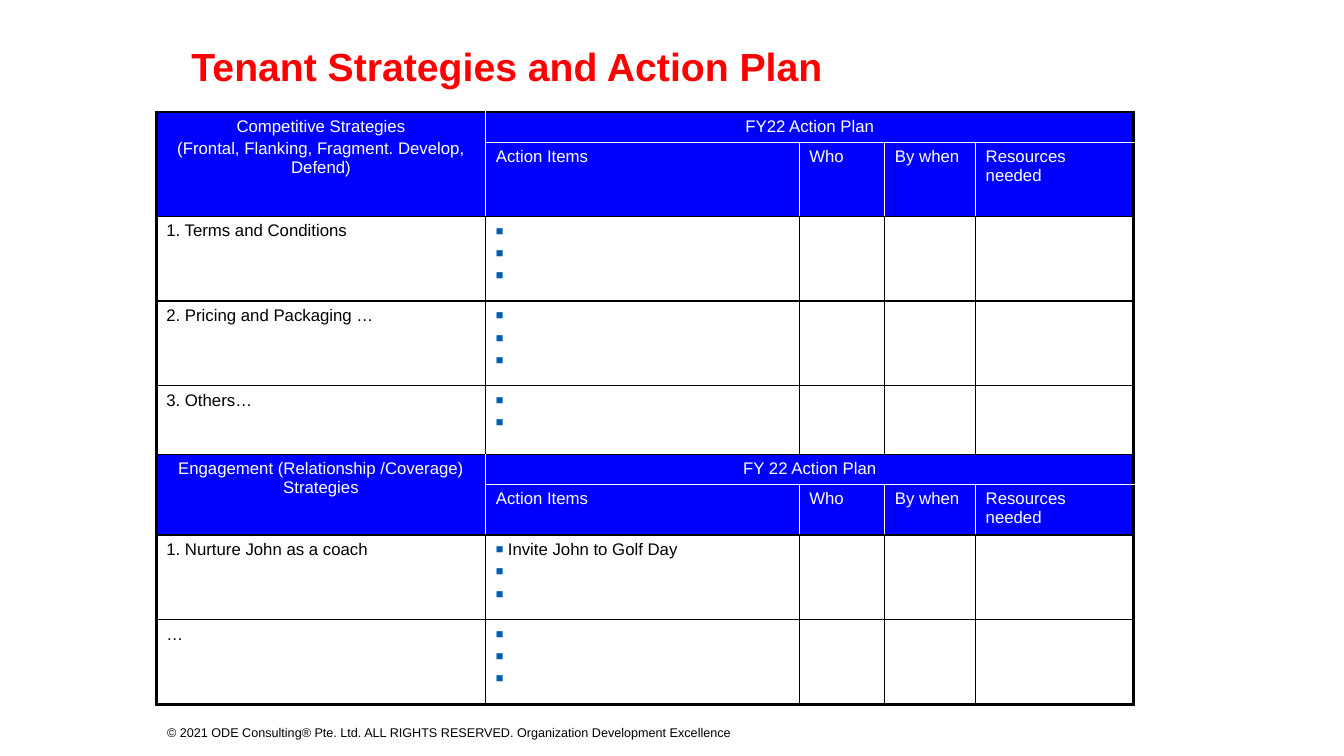
from lxml import etree
from pptx import Presentation
from pptx.dml.color import RGBColor
from pptx.enum.text import MSO_ANCHOR, PP_ALIGN
from pptx.oxml.ns import qn
from pptx.util import Pt

LEFT, MID = PP_ALIGN.LEFT, PP_ALIGN.CENTER
CENTER = MSO_ANCHOR.MIDDLE

BLACK, WHITE, BLUE, RED, DOT = "000000", "FFFFFF", "0000FF", "FF0000", "005EAF"
FONT = "Arial"
THIN, THICK = 1, 2.25
PLAIN = "{2D5ABB26-0587-4C30-8999-92F81FD0307C}"

TITLE = "Tenant Strategies and Action Plan"
FOOT = ("© 2021 ODE Consulting® Pte. Ltd. ALL RIGHTS RESERVED. "
        "Organization Development Excellence")
HEADS = ["Action Items", "Who", "By when", "Resources needed"]
PARTS = [
    {
        "name": ["Competitive Strategies",
                 "(Frontal, Flanking, Fragment. Develop, Defend)"],
        "plan": "FY22 Action Plan",
        "highs": [21.6, 52.9],
        "rows": [
            ("1. Terms and Conditions", [" ", " ", " "], 60.5),
            ("2. Pricing and Packaging …", [" ", " ", " "], 60.5),
            ("3. Others…", [" ", " "], 49),
        ],
    },
    {
        "name": ["Engagement (Relationship /Coverage) Strategies"],
        "plan": "FY 22 Action Plan",
        "highs": [21.6, 36],
        "rows": [
            ("1. Nurture John as a coach",
             ["Invite John to Golf Day", " ", " "], 60.5),
            ("…", [" ", " ", " "], 60.5),
        ],
    },
]
WIDTHS = [235.4, 223.9, 61.2, 64.8, 113]
LAST = len(WIDTHS) - 1


def paint(code):
    return RGBColor.from_string(code)


def bullet(para):
    props = para._p.get_or_add_pPr()
    props.set("marL", str(Pt(8.6)))
    props.set("indent", str(-Pt(8.6)))
    tone = etree.SubElement(props, qn("a:buClr"))
    etree.SubElement(tone, qn("a:srgbClr"), val=DOT)
    etree.SubElement(props, qn("a:buSzPct"), val="75000")
    etree.SubElement(props, qn("a:buFont"), typeface=FONT)
    etree.SubElement(props, qn("a:buChar"), char="■")


def write(frame, lines, size=12, color=BLACK, bold=False, align=LEFT,
          dots=False, space=None):
    frame.word_wrap = True
    for num, line in enumerate(lines):
        para = frame.add_paragraph() if num else frame.paragraphs[0]
        para.alignment = align
        if num:
            para.space_before = Pt(2.4)
        if space:
            para.line_spacing = space
        if dots:
            bullet(para)
        if not line:
            etree.SubElement(para._p, qn("a:endParaRPr"), sz=str(size * 100))
            continue
        run = para.add_run()
        run.text = line
        font = run.font
        font.name, font.size, font.bold = FONT, Pt(size), bold
        font.color.rgb = paint(color)


def label(page, box, text, inset=None, **look):
    frame = page.shapes.add_textbox(*map(Pt, box)).text_frame
    frame.vertical_anchor = CENTER
    if inset is not None:
        frame.margin_left = frame.margin_right = Pt(inset)
        frame.margin_top = frame.margin_bottom = Pt(inset)
    write(frame, [text], **look)


def border(cell, sides):
    props = cell._tc.get_or_add_tcPr()
    for spot, (side, (color, width)) in enumerate(sides.items()):
        line = etree.Element(qn("a:ln" + side), w=str(Pt(width)))
        fill = etree.SubElement(line, qn("a:solidFill"))
        etree.SubElement(fill, qn("a:srgbClr"), val=color)
        props.insert(spot, line)


def edges(row, col, down, over, head, end):
    inner, outer = (BLACK, THIN), (BLACK, THICK)
    pale = (WHITE, THIN) if head else inner
    top = pale if head == 2 else inner
    base = pale if head == 1 and col else inner
    return {
        "L": pale if col else outer,
        "R": outer if col + over > LAST else pale,
        "T": top if row else outer,
        "B": outer if row + down > end else base,
    }


def build(page):
    grid = []
    for part in PARTS:
        grid.append((1, part["highs"][0], [part["name"], [part["plan"]]]))
        grid.append((2, part["highs"][1], [[""]] + [[h] for h in HEADS]))
        for name, acts, high in part["rows"]:
            grid.append((0, high, [[name], acts]))
    size = map(Pt, (111.6, 80, sum(WIDTHS), sum(g[1] for g in grid)))
    table = page.shapes.add_table(len(grid), len(WIDTHS), *size).table
    table.first_row = table.horz_banding = False
    table._tbl.tblPr.find(qn("a:tableStyleId")).text = PLAIN
    for col, width in enumerate(WIDTHS):
        table.columns[col].width = Pt(width)
    for row, (head, high, texts) in enumerate(grid):
        table.rows[row].height = Pt(high)
        if head == 1:
            table.cell(row, 0).merge(table.cell(row + 1, 0))
            table.cell(row, 1).merge(table.cell(row, LAST))
        for col in range(len(WIDTHS)):
            cell = table.cell(row, col)
            lines = texts[col] if col < len(texts) else [""]
            write(cell.text_frame, lines,
                  color=WHITE if head else BLACK,
                  align=MID if head == 1 else LEFT,
                  dots=not head and col == 1)
            if head:
                cell.fill.solid()
                cell.fill.fore_color.rgb = paint(BLUE)
            else:
                cell.fill.background()
            if not cell.is_spanned:
                down = cell.span_height if cell.is_merge_origin else 1
                over = cell.span_width if cell.is_merge_origin else 1
                border(cell, edges(row, col, down, over, head, len(grid) - 1))


def main():
    deck = Presentation()
    deck.slide_width, deck.slide_height = Pt(960), Pt(540)
    page = deck.slides.add_slide(deck.slide_layouts[6])
    label(page, (112.3, 514, 530.6, 18), FOOT, size=9)
    build(page)
    label(page, (136.8, 26.6, 648, 44.6), TITLE, inset=0, size=28,
          color=RED, bold=True, space=0.9)
    deck.save("out.pptx")


if __name__ == "__main__":
    main()
